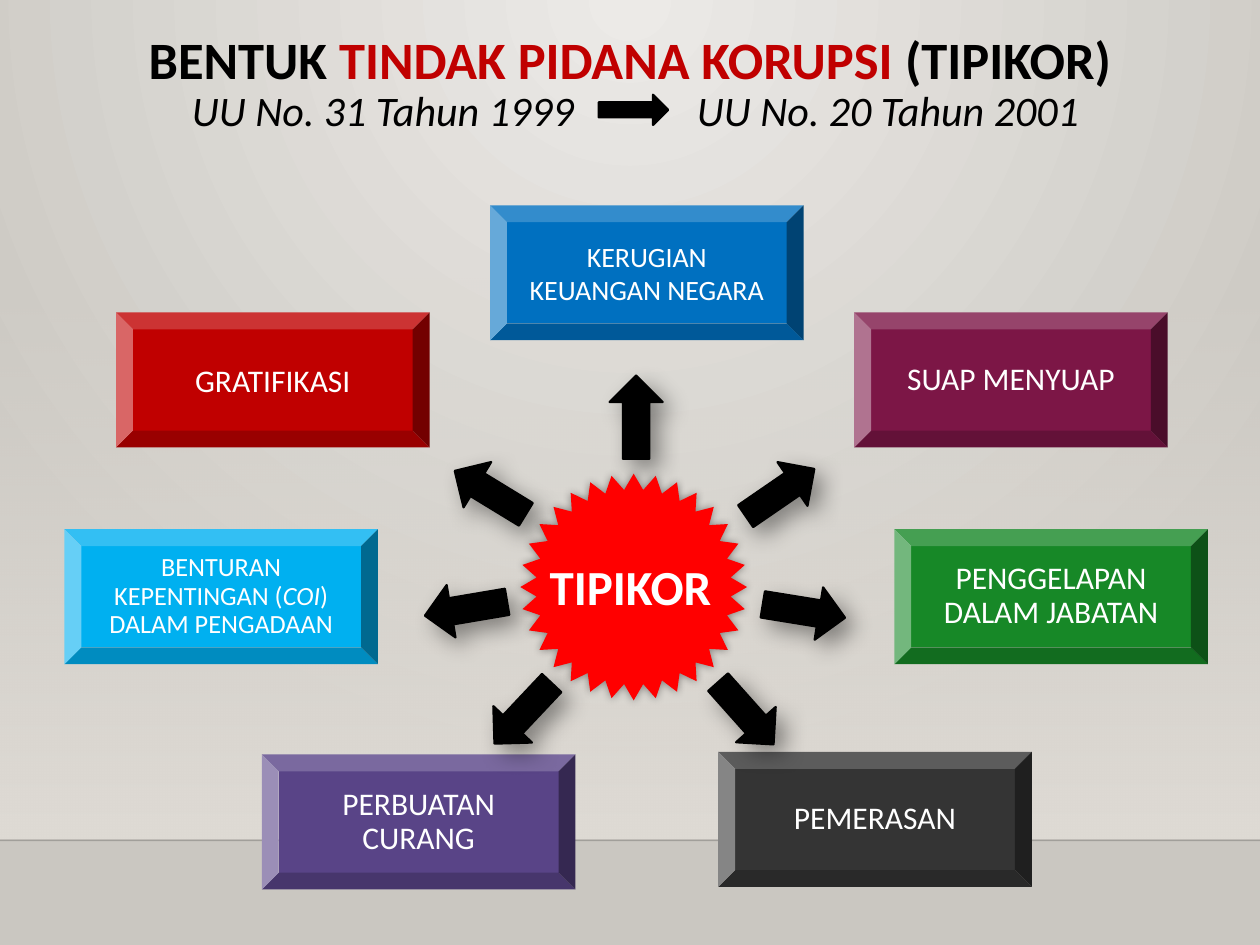
from dataclasses import dataclass
from typing import Optional

from lxml.etree import SubElement
from pptx import Presentation
from pptx.dml.color import RGBColor
from pptx.enum.shapes import MSO_CONNECTOR, MSO_SHAPE as Shp
from pptx.enum.text import MSO_ANCHOR as Anchor, PP_ALIGN as Align
from pptx.oxml import parse_xml
from pptx.oxml.ns import nsdecls, qn
from pptx.util import Cm, Pt


@dataclass(frozen=True)
class Theme:
    font: str = "Calibri"
    white: str = "FFFFFF"
    black: str = "000000"
    accent: str = "C00000"
    star: str = "FF0000"
    wall: str = "DFDBD5"
    glow: str = "ECEAE7"
    edge: str = "CAC7C1"
    title: int = 30
    hub: int = 28
    subtitle: int = 24
    label: int = 18


@dataclass(frozen=True)
class Run:
    text: str
    color: str = "FFFFFF"
    bold: bool = False
    italic: bool = False


@dataclass(frozen=True)
class Box:
    left: float
    top: float
    width: float
    height: float

    def emu(self) -> tuple:
        return Cm(self.left), Cm(self.top), Cm(self.width), Cm(self.height)


@dataclass(frozen=True)
class Crime:
    left: float
    top: float
    fill: str
    runs: tuple
    size: int = 18
    spacing: Optional[float] = 0.9


@dataclass(frozen=True)
class Pointer:
    left: float
    top: float
    angle: float


T = Theme()
BEVEL = (6.32, 2.72)
ARROW = (1.07, 1.68)

CRIMES = [
    Crime(9.88, 4.14, "0070C0", (Run("KERUGIAN KEUANGAN NEGARA"),), 16, None),
    Crime(2.34, 6.3, "C00000", (Run("GRATIFIKASI"),), T.label, None),
    Crime(1.3, 10.67, "00B0F0", (Run("BENTURAN KEPENTINGAN ("), Run("COI", italic=True),
                                 Run(") DALAM PENGADAAN")), 15),
    Crime(5.28, 15.21, "594487", (Run("PERBUATAN CURANG"),)),
    Crime(14.48, 15.16, "343434", (Run("PEMERASAN"),)),
    Crime(18.03, 10.67, "178827", (Run("PENGGELAPAN DALAM JABATAN"),)),
    Crime(17.22, 6.3, "7C1646", (Run("SUAP MENYUAP"),)),
]

POINTERS = [
    Pointer(12.29, 7.57, 0),
    Pointer(15.19, 9.09, 55.5),
    Pointer(15.67, 11.48, 99.2),
    Pointer(14.5, 13.54, 138.3),
    Pointer(10.01, 13.54, 223.3),
    Pointer(8.86, 11.43, 260.4),
    Pointer(9.35, 9.09, 301.4),
]


def set_gradient(parent, start: str, end: str, direction: str, start_alpha: int = 100) -> None:
    old = next(parent.iter(qn("a:gradFill")))
    new = parse_xml(
        f'<a:gradFill {nsdecls("a")} rotWithShape="1"><a:gsLst>'
        f'<a:gs pos="0"><a:srgbClr val="{start}"><a:alpha val="{start_alpha * 1000}"/></a:srgbClr></a:gs>'
        f'<a:gs pos="100000"><a:srgbClr val="{end}"/></a:gs>'
        f'</a:gsLst>{direction}</a:gradFill>')
    old.getparent().replace(old, new)


def add_shape(shapes, kind, box: Box, fill: Optional[str], line: Optional[str] = None):
    sp = shapes.add_shape(kind, *box.emu())
    sp.shadow.inherit = False
    if fill:
        sp.fill.solid()
        sp.fill.fore_color.rgb = RGBColor.from_string(fill)
    if line:
        sp.line.color.rgb = RGBColor.from_string(line)
        sp.line.width = Pt(1.25)
    else:
        sp.line.fill.background()
    return sp


def add_shadow(sp, blur: float, dist: float, angle: int) -> None:
    effects = sp.element.spPr.find(qn("a:effectLst"))
    shadow = SubElement(effects, qn("a:outerShdw"), blurRad=str(Pt(blur)), dist=str(Pt(dist)),
                        dir=str(angle * 60000), algn="ctr", rotWithShape="0")
    color = SubElement(shadow, qn("a:srgbClr"), val=T.black)
    SubElement(color, qn("a:alpha"), val="40000")


def write(sp, runs: tuple, size: int, align=Align.CENTER, spacing: Optional[float] = None,
          anchor=Anchor.TOP, tab: Optional[float] = None) -> None:
    tf = sp.text_frame
    tf.word_wrap = True
    tf.vertical_anchor = anchor
    p = tf.paragraphs[0]
    p.alignment = align
    if spacing:
        p.line_spacing = spacing
    if tab:
        tabs = SubElement(p._p.get_or_add_pPr(), qn("a:tabLst"))
        SubElement(tabs, qn("a:tab"), pos=str(Cm(tab)), algn="l")
    for run in runs:
        r = p.add_run()
        r.text = run.text
        r.font.name = T.font
        r.font.size = Pt(size)
        r.font.bold = run.bold
        r.font.italic = run.italic
        r.font.color.rgb = RGBColor.from_string(run.color)


def add_backdrop(slide) -> None:
    slide.background.fill.gradient()
    set_gradient(slide.element, T.glow, T.edge,
                 '<a:path path="circle"><a:fillToRect l="43000" t="0" r="43000" b="100000"/></a:path>')
    wall = add_shape(slide.shapes, Shp.RECTANGLE, Box(0, 5.59, 25.4, 11.34), None)
    wall.fill.gradient()
    set_gradient(wall.element, T.wall, T.wall, '<a:lin ang="5400000" scaled="0"/>', 0)
    floor = slide.shapes.add_connector(MSO_CONNECTOR.STRAIGHT, Cm(0), Cm(16.94), Cm(25.4), Cm(16.94))
    floor.line.color.rgb = RGBColor.from_string(T.black)
    floor.line.width = Pt(1)
    color = next(floor.element.spPr.iter(qn("a:srgbClr")))
    SubElement(color, qn("a:alpha"), val="20000")
    SubElement(floor.element.spPr, qn("a:effectLst"))


def add_crime(slide, crime: Crime) -> None:
    sp = add_shape(slide.shapes, Shp.BEVEL, Box(crime.left, crime.top, *BEVEL), crime.fill)
    write(sp, crime.runs, crime.size, spacing=crime.spacing, anchor=Anchor.MIDDLE)


def add_pointer(slide, pointer: Pointer) -> None:
    sp = add_shape(slide.shapes, Shp.UP_ARROW, Box(pointer.left, pointer.top, *ARROW), T.black, T.black)
    sp.rotation = pointer.angle
    add_shadow(sp, 13, 7, 45)


def add_hub(slide) -> None:
    star = add_shape(slide.shapes, Shp.STAR_32_POINT, Box(10.49, 9.55, 4.57, 4.57), T.star)
    star.adjustments[0] = 0.43
    add_shadow(star, 5, 0, 0)
    label = slide.shapes.add_textbox(*Box(10.64, 11.1, 4.14, 1.45).emu())
    write(label, (Run("TIPIKOR", T.white, bold=True),), T.hub)


def add_heading(slide) -> None:
    title = slide.shapes.add_textbox(*Box(0, 0.56, 25.4, 1.42).emu())
    write(title, (Run("BENTUK ", T.black, bold=True),
                  Run("TINDAK PIDANA KORUPSI ", T.accent, bold=True),
                  Run("(TIPIKOR)", T.black, bold=True)), T.title, spacing=0.9)
    laws = slide.shapes.add_group_shape()
    subtitle = laws.shapes.add_textbox(*Box(1.7, 1.57, 22.28, 1.27).emu())
    subtitle.text_frame.margin_left = Cm(2.17)
    write(subtitle, (Run("UU No. 31 Tahun 1999\tUU No. 20 Tahun 2001", T.black, italic=True),),
          T.subtitle, Align.LEFT, tab=10.18)
    add_shape(laws.shapes, Shp.RIGHT_ARROW, Box(12.07, 1.91, 1.4, 0.61), T.black, T.black)


def main() -> None:
    prs = Presentation()
    prs.slide_width, prs.slide_height = Cm(25.4), Cm(19.05)
    slide = prs.slides.add_slide(prs.slide_layouts[6])
    add_backdrop(slide)
    for crime in CRIMES:
        add_crime(slide, crime)
    for pointer in POINTERS:
        add_pointer(slide, pointer)
    add_hub(slide)
    add_heading(slide)
    prs.save("out.pptx")


if __name__ == "__main__":
    main()
